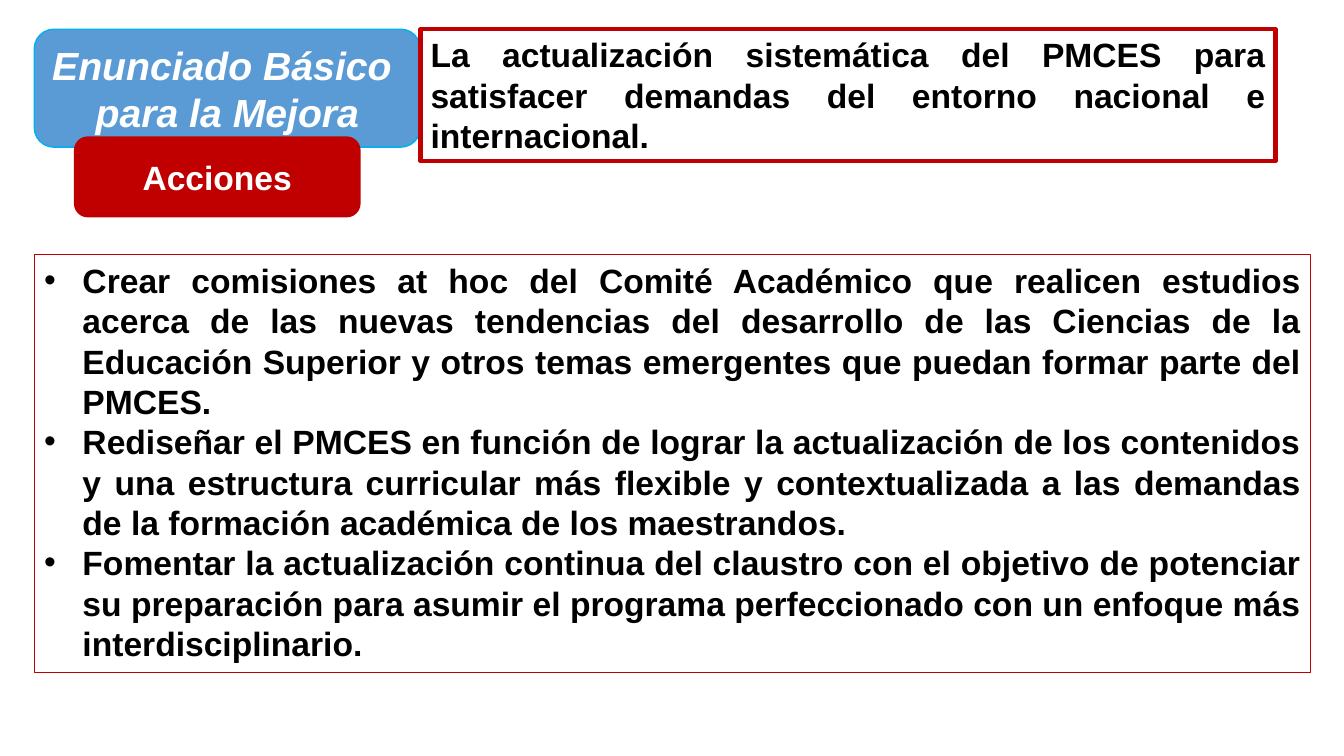
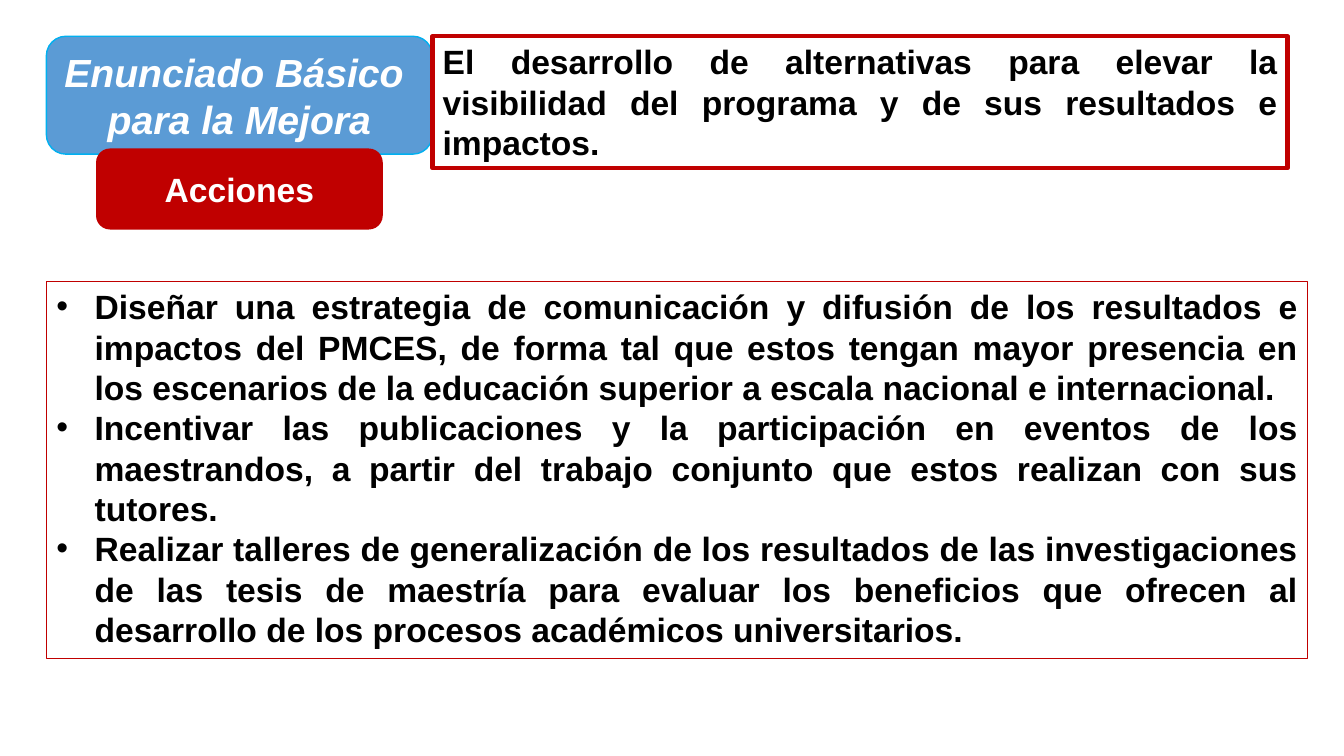
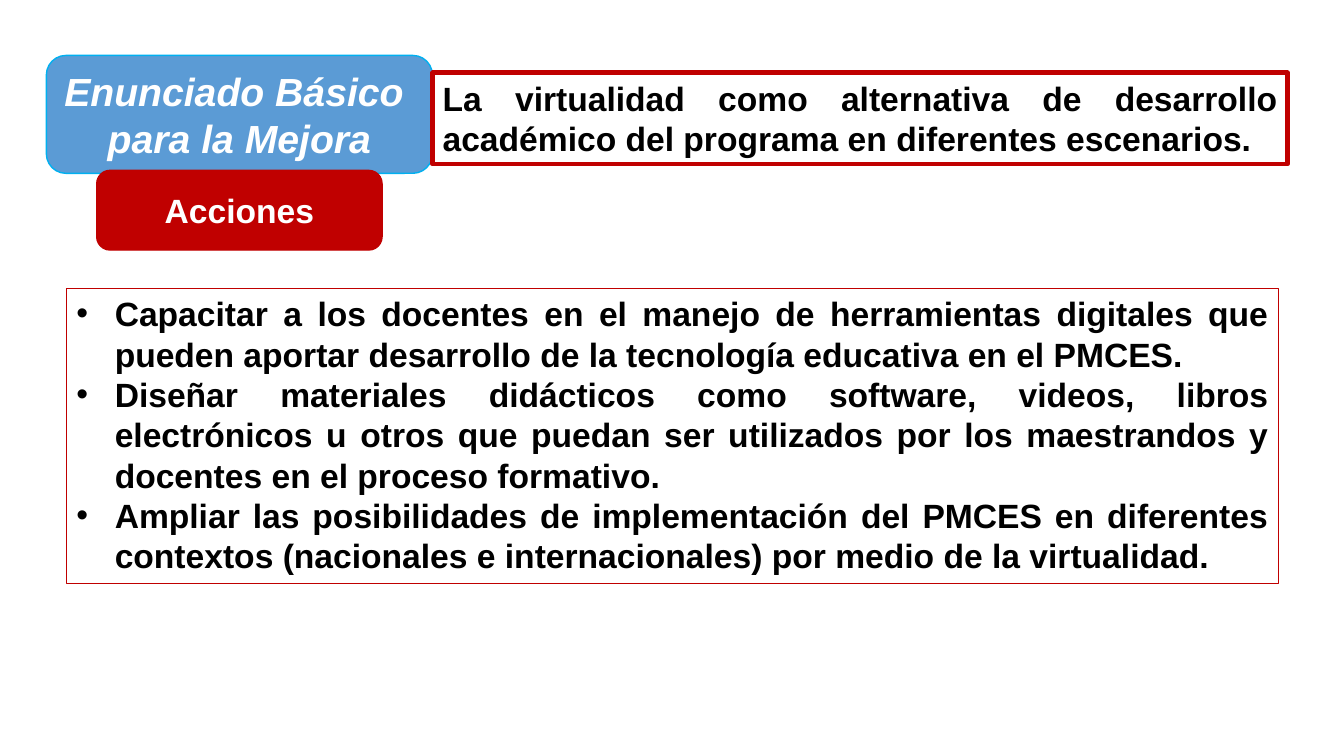
"""Builds three slides of improvement statements and their actions."""
from lxml import etree
from pptx import Presentation
from pptx.dml.color import RGBColor
from pptx.enum.shapes import MSO_SHAPE
from pptx.enum.text import MSO_ANCHOR, MSO_AUTO_SIZE, PP_ALIGN
from pptx.oxml.ns import qn
from pptx.util import Inches, Pt

ROUNDED = MSO_SHAPE.ROUNDED_RECTANGLE
TOP, MIDDLE = MSO_ANCHOR.TOP, MSO_ANCHOR.MIDDLE
CENTER, JUSTIFY = PP_ALIGN.CENTER, PP_ALIGN.JUSTIFY
GROW = MSO_AUTO_SIZE.SHAPE_TO_FIT_TEXT

FONT = "Arial"
BLUE, CYAN, RED, WHITE, BLACK = "5B9BD5", "00B0F0", "C00000", "FFFFFF", "000000"
BADGE_WIDTH, BADGE_HEIGHT = 3.83, 1.17
STATEMENT_WIDTH = 8.48
LABEL_WIDTH, LABEL_HEIGHT = 2.83, 0.79
BULLET_INDENT = 0.38
TITLE_ONLY = 5

BADGE_LINES = ["Enunciado Básico ", "para la Mejora"]
LABEL_LINES = ["Acciones"]

SLIDES = [
    {
        "badge": (0.34, 0.29),
        "statement_top": 0.29,
        "statement_height": 1.31,
        "statement": "La actualización sistemática del PMCES para satisfacer demandas "
                     "del entorno nacional e internacional.",
        "label": (0.74, 1.36),
        "actions_box": (0.34, 2.53, 12.66, 4.14),
        "actions": [
            "Crear comisiones at hoc del Comité Académico que realicen estudios acerca de "
            "las nuevas tendencias del desarrollo de las Ciencias de la Educación Superior "
            "y otros temas emergentes que puedan formar parte del PMCES.",
            "Rediseñar el PMCES en función de lograr la actualización de los contenidos y "
            "una estructura curricular más flexible y contextualizada a las demandas de la "
            "formación académica de los maestrandos. ",
            "Fomentar la actualización continua del claustro con el objetivo de potenciar "
            "su preparación para asumir el programa perfeccionado con un enfoque más "
            "interdisciplinario.",
        ],
    },
    {
        "badge": (0.46, 0.36),
        "statement_top": 0.36,
        "statement_height": 1.31,
        "statement": "El desarrollo de alternativas para elevar la visibilidad del programa "
                     "y de sus resultados e impactos.",
        "label": (0.96, 1.48),
        "actions_box": (0.46, 2.79, 12.51, 3.74),
        "actions": [
            "Diseñar una estrategia de comunicación y difusión de los resultados e impactos "
            "del PMCES, de forma tal que estos tengan mayor presencia en los escenarios de "
            "la educación superior a escala nacional e internacional.",
            "Incentivar las publicaciones y la participación en eventos de los maestrandos, "
            "a partir del trabajo conjunto que estos realizan con sus tutores.",
            "Realizar talleres de generalización de los resultados de las investigaciones "
            "de las tesis de maestría para evaluar los beneficios que ofrecen al desarrollo "
            "de los procesos académicos universitarios.",
        ],
    },
    {
        "badge": (0.46, 0.55),
        "statement_top": 0.72,
        "statement_height": 0.91,
        "statement": "La virtualidad como alternativa de desarrollo académico del programa "
                     "en diferentes escenarios. ",
        "label": (0.96, 1.69),
        "actions_box": (0.66, 2.86, 12.02, 2.93),
        "actions": [
            "Capacitar a los docentes en el manejo de herramientas digitales que pueden "
            "aportar desarrollo de la tecnología educativa en el PMCES.",
            "Diseñar materiales didácticos como software, videos, libros electrónicos u "
            "otros que puedan ser utilizados por los maestrandos y docentes en el proceso "
            "formativo.",
            "Ampliar las posibilidades de implementación del PMCES en diferentes contextos "
            "(nacionales e internacionales) por medio de la virtualidad.",
        ],
    },
]


def color(value):
    return RGBColor.from_string(value)


def outline(shape, line_color, width):
    shape.line.color.rgb = color(line_color)
    shape.line.width = Pt(width)


def write(shape, lines, size, text_color, align, anchor, italic=False):
    frame = shape.text_frame
    frame.text = "\n".join(lines)
    frame.word_wrap = True
    frame.vertical_anchor = anchor
    for para in frame.paragraphs:
        para.alignment = align
        para.line_spacing = 1.0
        for span in para.runs:
            span.font.name = FONT
            span.font.size = Pt(size)
            span.font.bold = True
            span.font.italic = italic
            span.font.color.rgb = color(text_color)


def add_bullet(para):
    properties = para._p.get_or_add_pPr()
    properties.set("marL", str(Inches(BULLET_INDENT)))
    properties.set("indent", str(-Inches(BULLET_INDENT)))
    etree.SubElement(properties, qn("a:buFont"), typeface=FONT)
    etree.SubElement(properties, qn("a:buChar"), char="•")


def add_panel(page, place, size, fill, line_color):
    panel = page.shapes.add_shape(ROUNDED, *map(Inches, place + size))
    panel.shadow.inherit = False
    panel.fill.solid()
    panel.fill.fore_color.rgb = color(fill)
    outline(panel, line_color, 1)
    return panel


def place_statement(page, content):
    statement = page.shapes.title
    statement.left = Inches(content["badge"][0] + BADGE_WIDTH)
    statement.top = Inches(content["statement_top"])
    statement.width = Inches(STATEMENT_WIDTH)
    statement.height = Inches(content["statement_height"])
    outline(statement, RED, 3)
    write(statement, [content["statement"]], 24, BLACK, JUSTIFY, TOP)
    statement.text_frame.auto_size = GROW
    return statement


def add_actions(page, content):
    actions = page.shapes.add_textbox(*map(Inches, content["actions_box"]))
    outline(actions, RED, 0.75)
    write(actions, content["actions"], 24, BLACK, JUSTIFY, TOP)
    actions.text_frame.auto_size = GROW
    for para in actions.text_frame.paragraphs:
        add_bullet(para)


def build_slide(deck, content):
    page = deck.slides.add_slide(deck.slide_layouts[TITLE_ONLY])
    badge = add_panel(page, content["badge"], (BADGE_WIDTH, BADGE_HEIGHT), BLUE, CYAN)
    write(badge, BADGE_LINES, 28, WHITE, CENTER, MIDDLE, italic=True)
    statement = place_statement(page, content)
    badge._element.addnext(statement._element)
    label = add_panel(page, content["label"], (LABEL_WIDTH, LABEL_HEIGHT), RED, RED)
    write(label, LABEL_LINES, 24, WHITE, CENTER, MIDDLE)
    add_actions(page, content)


def main():
    deck = Presentation()
    deck.slide_width, deck.slide_height = Inches(13.33), Inches(7.5)
    for content in SLIDES:
        build_slide(deck, content)
    deck.save("out.pptx")


if __name__ == "__main__":
    main()
